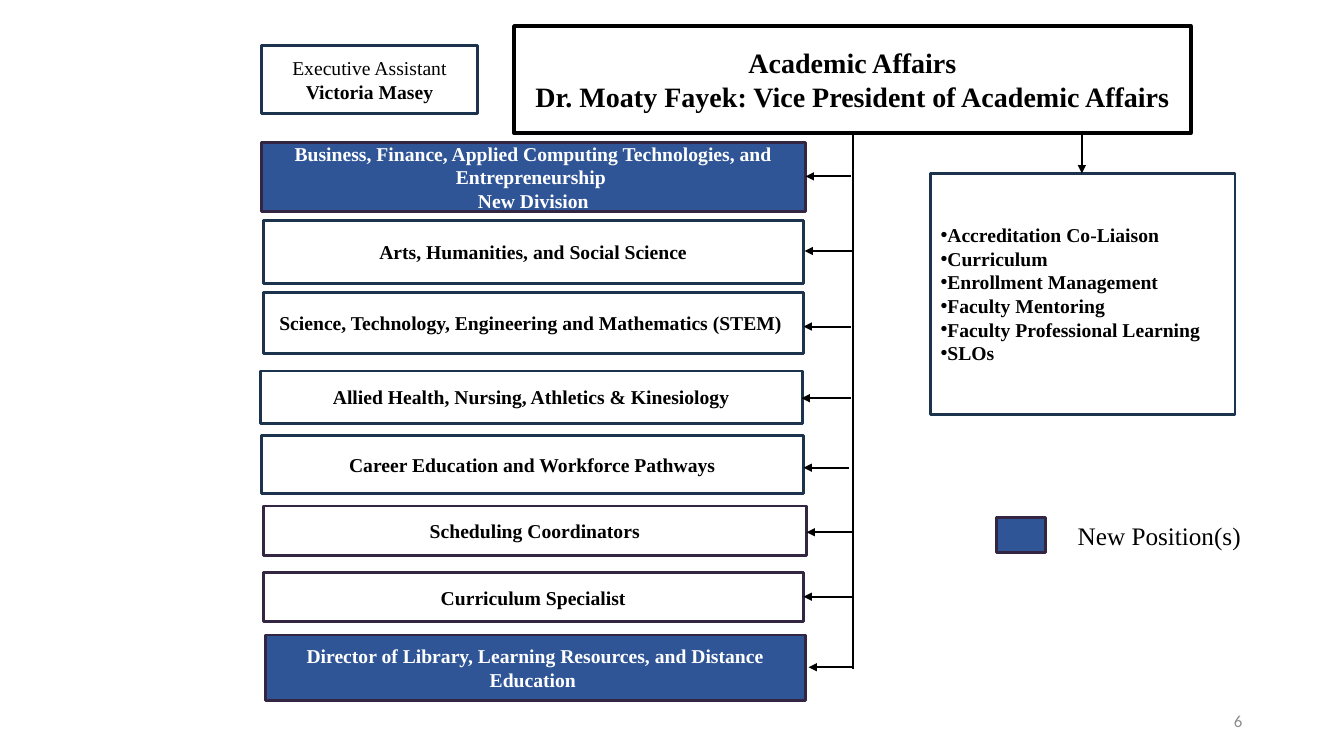
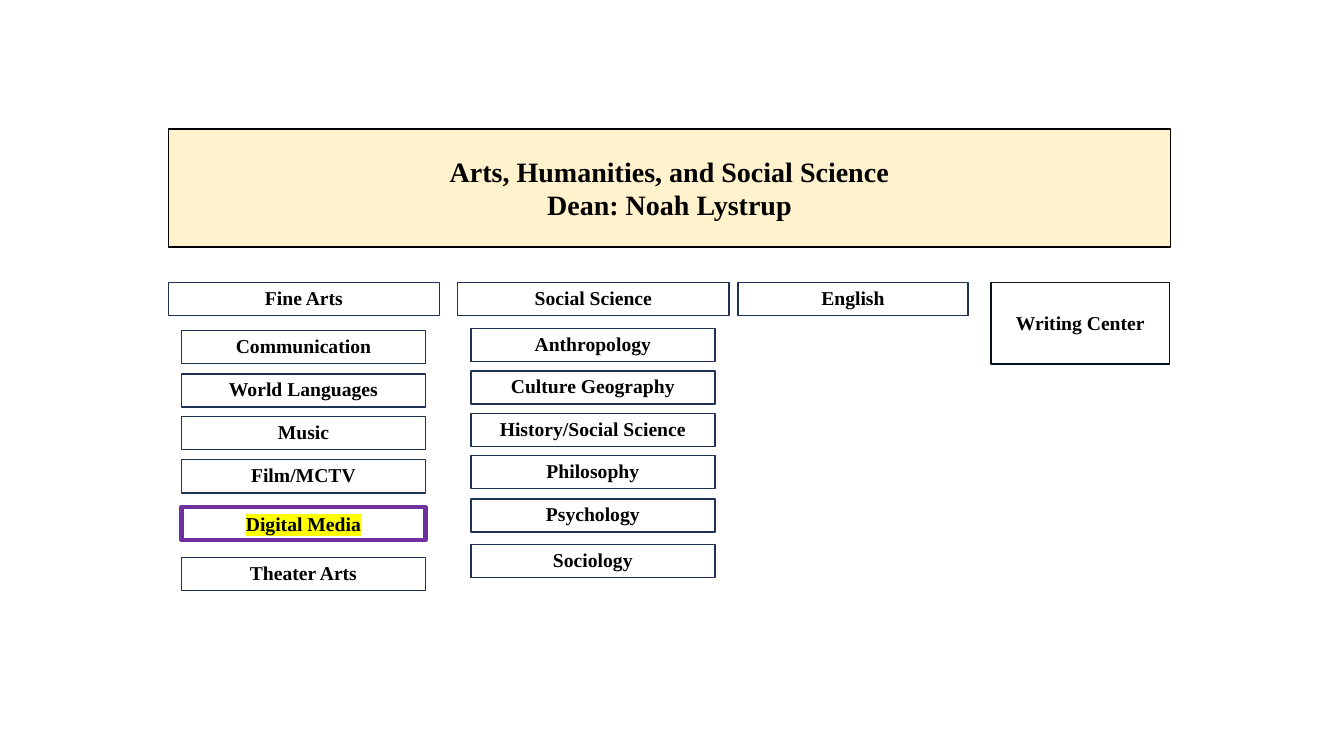
import pptx
import pptx.dml.color
import pptx.enum.shapes
import pptx.enum.text
import pptx.oxml.ns
import pptx.util
import lxml.etree
from dataclasses import dataclass

Inches = pptx.util.Inches
Align = pptx.enum.text.PP_ALIGN


@dataclass(frozen=True)
class Theme:
    font: str = "Times New Roman"
    number_font: str = "Calibri"
    title_size: int = 20
    legend_size: int = 18
    body_size: int = 14
    number_size: int = 12
    black: str = "000000"
    white: str = "FFFFFF"
    grey: str = "8C8C8C"
    new_position: str = "2F5597"
    cream: str = "FFF2CC"
    navy: str = "1C334E"
    plum: str = "322642"
    slate: str = "1E3256"
    ink: str = "09101D"
    purple: str = "7030A0"
    yellow: str = "FFFF00"


theme = Theme()
rgb = pptx.dml.color.RGBColor.from_string
qn = pptx.oxml.ns.qn


def add_box(slide, position, lines, line=None, width=2, fill=theme.white, size=theme.body_size,
            color=theme.black, bold=True, font=theme.font, align=Align.CENTER, spacing=None):
    lengths = [Inches(value) for value in position]
    if line:
        shape = slide.shapes.add_shape(pptx.enum.shapes.MSO_SHAPE.RECTANGLE, *lengths)
        shape.shadow.inherit = False
        shape.fill.solid()
        shape.fill.fore_color.rgb = rgb(fill)
        shape.line.color.rgb = rgb(line)
        shape.line.width = pptx.util.Pt(width)
    else:
        shape = slide.shapes.add_textbox(*lengths)
    frame = shape.text_frame
    frame.word_wrap = True
    frame.vertical_anchor = pptx.enum.text.MSO_ANCHOR.MIDDLE
    for index, text in enumerate(lines):
        paragraph = frame.add_paragraph() if index else frame.paragraphs[0]
        paragraph.alignment = align
        if spacing:
            paragraph.line_spacing = spacing
        run = paragraph.add_run()
        run.text = text
        run.font.name = font
        run.font.size = pptx.util.Pt(size)
        run.font.bold = bold
        run.font.color.rgb = rgb(color)
    return shape


def add_line(slide, start_x, start_y, end_x, end_y, arrow=True):
    connector = slide.shapes.add_connector(
        pptx.enum.shapes.MSO_CONNECTOR.STRAIGHT,
        Inches(start_x), Inches(start_y), Inches(end_x), Inches(end_y))
    connector.line.color.rgb = rgb(theme.black)
    connector.line.width = pptx.util.Pt(1.5)
    if arrow:
        outline = connector.line._get_or_add_ln()
        lxml.etree.SubElement(outline, qn("a:tailEnd"), type="triangle")
    lxml.etree.SubElement(connector._element.spPr, qn("a:effectLst"))


presentation = pptx.Presentation()
presentation.slide_width = Inches(13.33)
presentation.slide_height = Inches(7.5)
blank = presentation.slide_layouts[6]

slide = presentation.slides.add_slide(blank)
add_box(slide, (5.1, 0.26, 6.71, 1.06),
        ["Academic Affairs", "Dr. Moaty Fayek: Vice President of Academic Affairs"],
        theme.black, 3, size=theme.title_size)
assistant = add_box(slide, (2.59, 0.45, 2.15, 0.68),
                    ["Executive Assistant", "Victoria Masey"], theme.navy)
assistant.text_frame.paragraphs[0].runs[0].font.bold = False

trunk = 8.46
add_line(slide, trunk, 1.32, trunk, 6.64, arrow=False)

new_style = dict(line=theme.plum, fill=theme.new_position, color=theme.white)
division_style = dict(line=theme.navy)
staff_style = dict(line=theme.plum)
units = [
    ((2.59, 1.41, 5.4, 0.69), 8.44, 7.99, 1.75, new_style,
     ["Business, Finance, Applied Computing Technologies, and Entrepreneurship ", "New Division"]),
    ((2.61, 2.19, 5.36, 0.62), 8.45, 7.98, 2.49, division_style,
     ["Arts, Humanities, and Social Science"]),
    ((2.61, 2.9, 5.36, 0.61), 8.44, 7.97, 3.24, division_style,
     ["Science, Technology, Engineering and Mathematics (STEM) "]),
    ((2.58, 3.68, 5.38, 0.52), 8.44, 7.95, 3.95, division_style,
     ["Allied Health, Nursing, Athletics & Kinesiology"]),
    ((2.59, 4.32, 5.38, 0.58), 8.42, 7.97, 4.64, division_style,
     ["Career Education and Workforce Pathways"]),
    ((2.61, 5.02, 5.39, 0.49), 8.46, 8, 5.28, staff_style, ["Scheduling Coordinators"]),
    ((2.61, 5.68, 5.36, 0.49), 8.45, 7.97, 5.92, staff_style, ["Curriculum Specialist"]),
    ((2.63, 6.3, 5.36, 0.65), 8.45, 8.02, 6.62, new_style,
     ["Director of Library, Learning Resources, and Distance Education "]),
]
for position, arrow_start, arrow_end, arrow_y, style, lines in units:
    add_box(slide, position, lines, **style)
    add_line(slide, arrow_start, arrow_y, arrow_end, arrow_y)

duties = add_box(slide, (9.23, 1.72, 3.02, 2.39),
                 ["Accreditation Co-Liaison", "Curriculum", "Enrollment Management",
                  "Faculty Mentoring", "Faculty Professional Learning", "SLOs"],
                 theme.navy, align=Align.LEFT)
for paragraph in duties.text_frame.paragraphs:
    properties = paragraph._p.get_or_add_pPr()
    lxml.etree.SubElement(properties, qn("a:buFont"), typeface="Arial")
    lxml.etree.SubElement(properties, qn("a:buChar"), char="•")
add_line(slide, 10.73, 1.32, 10.73, 1.72)

add_box(slide, (9.88, 5.13, 0.49, 0.35), [], theme.plum, fill=theme.new_position)
add_box(slide, (10.59, 5.11, 1.89, 0.4), ["New Position(s)"],
        size=theme.legend_size, bold=False, align=Align.LEFT)
add_box(slide, (9.42, 6.95, 3, 0.4), ["6"], size=theme.number_size, color=theme.grey,
        bold=False, font=theme.number_font, align=Align.RIGHT)

slide = presentation.slides.add_slide(blank)
add_box(slide, (1.67, 1.28, 9.94, 1.17),
        ["Arts, Humanities, and Social Science", "Dean: Noah Lystrup"],
        theme.black, 1, theme.cream, theme.title_size)
add_box(slide, (9.83, 2.8, 1.77, 0.81), ["Writing Center"], theme.ink, 1)

row_height = 0.33
indent = 0.13
departments = [
    ("Fine Arts", 1.67, 2.69,
     [("Communication", 3.28), ("World Languages", 3.71), ("Music", 4.13),
      ("Film/MCTV", 4.56), ("Digital Media", 5.03), ("Theater Arts", 5.53)]),
    ("Social Science", 4.54, 2.69,
     [("Anthropology", 3.26), ("Culture Geography", 3.68), ("History/Social Science", 4.1),
      ("Philosophy", 4.52), ("Psychology", 4.95), ("Sociology", 5.4)]),
    ("English", 7.32, 2.28, []),
]
for department, left, width, programs in departments:
    add_box(slide, (left, 2.8, width, row_height), [department], theme.slate, 1, spacing=0.9)
    for program, top in programs:
        position = (left + indent, top, 2.42, row_height)
        if program == "Digital Media":
            shape = add_box(slide, position, [program], theme.purple, 3)
            run = shape.text_frame.paragraphs[0].runs[0]
            highlight = lxml.etree.Element(qn("a:highlight"))
            lxml.etree.SubElement(highlight, qn("a:srgbClr"), val=theme.yellow)
            run.font._element.find(qn("a:solidFill")).addnext(highlight)
        else:
            add_box(slide, position, [program], theme.slate, 1, spacing=0.9)

presentation.save("out.pptx")
